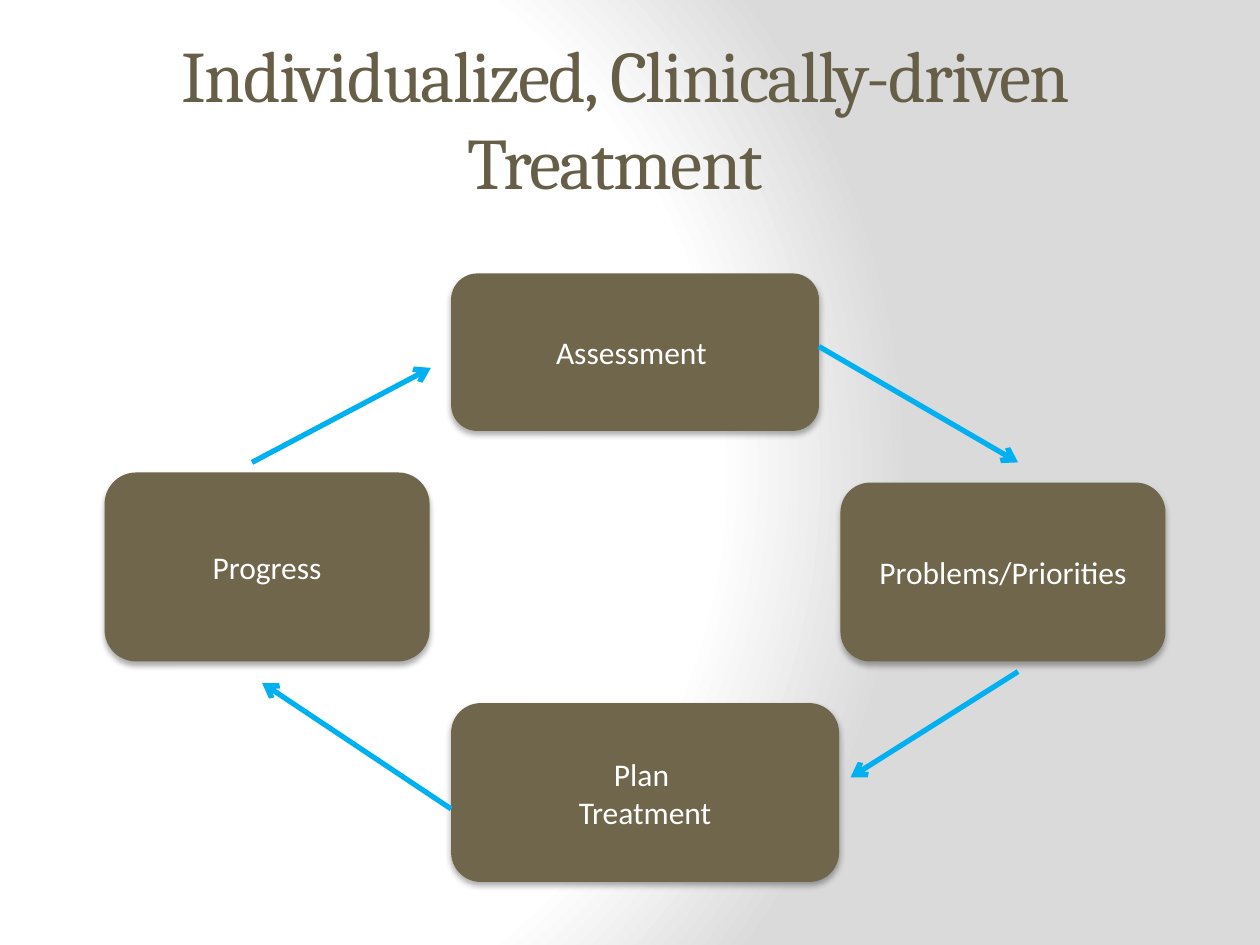
import pptx
import pptx.util
import pptx.dml.color
import pptx.enum.shapes
import pptx.enum.text
import pptx.oxml
import pptx.oxml.ns
from pptx.util import Inches

THEME = {
    "title": "675E47", "box": "6F664C", "box_text": "FFFFFF", "arrow": "00B0F0",
    "shadow": "000000", "glow": "FFFFFF", "edge": "DADADA",
    "title_font": "Cambria", "body_font": "Calibri",
    "title_size": 41.4, "body_size": 18, "arrow_width": 3,
}

TITLE = "Individualized, Clinically-driven Treatment\t"
TITLE_BOX = (0.42, 0.3, 9.08, 1.25)

# The stages of the cycle, clockwise: text and (left, top, width, height)
STAGES = [
    ("Assessment ", (3.58, 2.17, 2.92, 1.25)),
    ("Problems/Priorities", (6.67, 3.83, 2.58, 1.42)),
    ("Plan \nTreatment", (3.58, 5.58, 3.08, 1.42)),
    ("Progress", (0.83, 3.75, 2.58, 1.5)),
]

# The arrow that leaves each stage: start and end
ARROWS = [
    ((6.5, 2.75), (8.08, 3.67)),
    ((8.08, 5.33), (6.75, 6.17)),
    ((3.58, 6.42), (2.08, 5.42)),
    ((2, 3.67), (3.42, 2.92)),
]

NS = pptx.oxml.ns.nsdecls("a")


def color(key):
    return pptx.dml.color.RGBColor.from_string(THEME[key])


def style(paragraph, role, text_color):
    paragraph.alignment = pptx.enum.text.PP_ALIGN.CENTER
    paragraph.font.name = THEME[f"{role}_font"]
    paragraph.font.size = pptx.util.Pt(THEME[f"{role}_size"])
    paragraph.font.color.rgb = color(text_color)


def add_background(slide):
    fill = slide.background.fill
    fill.gradient()
    stops = ((0, "glow"), (75, "glow"), (100, "edge"))
    stop_xml = "".join(
        f'<a:gs pos="{pos * 1000}"><a:srgbClr val="{THEME[key]}"/></a:gs>'
        for pos, key in stops)
    gradient = pptx.oxml.parse_xml(
        f'<a:gradFill {NS} rotWithShape="1"><a:gsLst>{stop_xml}</a:gsLst>'
        '<a:path path="circle"><a:fillToRect l="20000" t="50000" r="100000" b="50000"/>'
        '</a:path></a:gradFill>')
    properties = slide.background._cSld.bg.bgPr
    properties.replace(properties.find(pptx.oxml.ns.qn("a:gradFill")), gradient)


def add_title(slide):
    title = slide.shapes.title
    title.left, title.top, title.width, title.height = map(Inches, TITLE_BOX)
    frame = title.text_frame
    frame.text = TITLE
    frame.word_wrap = True
    frame.auto_size = pptx.enum.text.MSO_AUTO_SIZE.NONE
    frame.vertical_anchor = pptx.enum.text.MSO_ANCHOR.MIDDLE
    paragraph = frame.paragraphs[0]
    style(paragraph, "title", "title")
    paragraph.runs[0]._r.get_or_add_rPr().set("spc", "-100")


def add_stage(slide, text, box):
    stage = slide.shapes.add_shape(
        pptx.enum.shapes.MSO_SHAPE.ROUNDED_RECTANGLE, *map(Inches, box))
    stage.fill.solid()
    stage.fill.fore_color.rgb = color("box")
    stage.line.fill.background()
    # Soft shadow straight below
    stage.shadow.inherit = False
    effects = stage._element.spPr.find(pptx.oxml.ns.qn("a:effectLst"))
    effects.append(pptx.oxml.parse_xml(
        f'<a:outerShdw {NS} blurRad="{pptx.util.Pt(3.5)}" dist="{pptx.util.Pt(2.2)}" '
        f'dir="5400000" rotWithShape="0"><a:srgbClr val="{THEME["shadow"]}">'
        '<a:alpha val="32000"/></a:srgbClr></a:outerShdw>'))
    frame = stage.text_frame
    frame.text = text
    frame.word_wrap = True
    frame.vertical_anchor = pptx.enum.text.MSO_ANCHOR.MIDDLE
    for paragraph in frame.paragraphs:
        style(paragraph, "body", "box_text")


def add_arrow(slide, start, end):
    arrow = slide.shapes.add_connector(
        pptx.enum.shapes.MSO_CONNECTOR.STRAIGHT, *map(Inches, start + end))
    arrow.line.color.rgb = color("arrow")
    arrow.line.width = pptx.util.Pt(THEME["arrow_width"])
    arrow.line._get_or_add_ln().append(
        pptx.oxml.parse_xml(f'<a:tailEnd {NS} type="arrow"/>'))
    arrow._element.spPr.append(pptx.oxml.parse_xml(f"<a:effectLst {NS}/>"))


def main():
    deck = pptx.Presentation()
    deck.slide_width, deck.slide_height = Inches(10), Inches(7.5)
    slide = deck.slides.add_slide(deck.slide_layouts.get_by_name("Title Only"))
    add_background(slide)
    add_title(slide)
    for (text, box), (start, end) in zip(STAGES, ARROWS):
        add_stage(slide, text, box)
        add_arrow(slide, start, end)
    deck.save("out.pptx")


if __name__ == "__main__":
    main()
